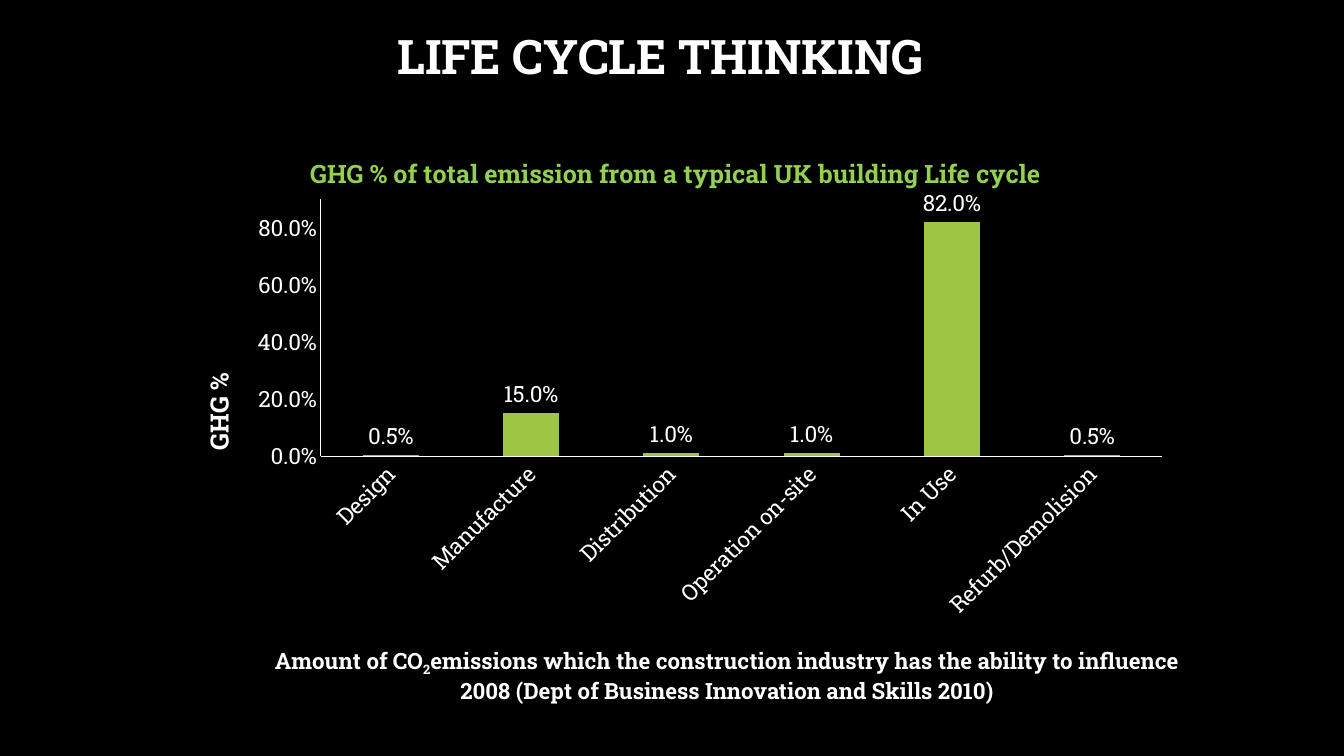
from lxml.etree import SubElement
from pptx import Presentation
from pptx.chart.data import CategoryChartData
from pptx.dml.color import RGBColor
from pptx.enum.chart import XL_CHART_TYPE, XL_LABEL_POSITION, XL_TICK_MARK
from pptx.enum.text import MSO_ANCHOR, PP_ALIGN
from pptx.oxml.ns import qn
from pptx.util import Inches, Pt

BLACK = RGBColor(0x00, 0x00, 0x00)
WHITE = RGBColor(0xFF, 0xFF, 0xFF)
LEAF = RGBColor(0x9E, 0xC5, 0x44)
LIME = RGBColor(0x92, 0xD0, 0x50)
FONT = "Roboto Slab"
WIDTH, HEIGHT = 13.33, 7.5

EMISSIONS = {
    "Design": 0.005,
    "Manufacture": 0.15,
    "Distribution": 0.01,
    "Operation on-site": 0.01,
    "In Use": 0.82,
    "Refurb/Demolision": 0.005,
}


def style(font, size, color=WHITE, bold=False):
    font.name = FONT
    font.size = Pt(size)
    font.bold = bold
    font.color.rgb = color


def add_text(s, box, parts, size, anchor=MSO_ANCHOR.TOP, spacing=1.0):
    tf = s.shapes.add_textbox(*box).text_frame
    tf.word_wrap = True
    tf.vertical_anchor = anchor
    p = tf.paragraphs[0]
    p.alignment = PP_ALIGN.CENTER
    p.line_spacing = spacing
    for text, baseline in parts:
        r = p.add_run()
        r.text = text
        style(r.font, size, bold=True)
        if baseline:
            r.font._element.set("baseline", str(baseline))


def place(element, index, **shares):
    for old in element.findall(qn("c:layout")):
        element.remove(old)
    layout = SubElement(element, qn("c:layout"))
    manual = SubElement(layout, qn("c:manualLayout"))
    if "w" in shares:
        SubElement(manual, qn("c:layoutTarget")).set("val", "inner")
    for key in ("x", "y"):
        SubElement(manual, qn(f"c:{key}Mode")).set("val", "edge")
    for key, share in shares.items():
        SubElement(manual, qn(f"c:{key}")).set("val", str(share))
    element.insert(index, layout)


def set_heading(title, text, color, **shares):
    tf = title.text_frame
    tf.text = text
    style(tf.paragraphs[0].runs[0].font, 18, color, True)
    place(title._element, 1, **shares)


def style_axis(axis):
    axis.has_major_gridlines = False
    axis.major_tick_mark = axis.minor_tick_mark = XL_TICK_MARK.NONE
    axis.format.line.color.rgb = WHITE
    axis.format.line.width = Pt(0.75)
    style(axis.tick_labels.font, 16)


def add_emissions_chart(s, box):
    data = CategoryChartData(number_format="0.0%")
    data.categories = list(EMISSIONS)
    data.add_series("Series 1", list(EMISSIONS.values()))
    chart = s.shapes.add_chart(XL_CHART_TYPE.COLUMN_CLUSTERED, *box, data).chart
    style(chart.font, 10)
    chart.has_legend = False
    chart.has_title = True
    set_heading(chart.chart_title,
                "GHG % of total emission from a typical UK building Life cycle",
                LIME, x=0.13, y=0.04)
    place(chart._chartSpace.chart.plotArea, 0, x=0.145, y=0.14, w=0.836, h=0.515)

    stages, shares = chart.category_axis, chart.value_axis
    style_axis(stages)
    stages._element.find(qn("c:txPr")).find(qn("a:bodyPr")).set("rot", "-2700000")
    style_axis(shares)
    shares.minimum_scale, shares.maximum_scale, shares.major_unit = 0, 0.9, 0.2
    shares.tick_labels.number_format = "0.0%"
    shares.tick_labels.number_format_is_linked = False
    shares.has_title = True
    set_heading(shares.axis_title, "GHG %", WHITE, x=0.02, y=0.48)

    plot = chart.plots[0]
    plot.gap_width = 150
    plot.vary_by_categories = False
    fill = plot.series[0].format.fill
    fill.solid()
    fill.fore_color.rgb = LEAF
    plot.has_data_labels = True
    labels = plot.data_labels
    labels.show_value = True
    labels.position = XL_LABEL_POSITION.OUTSIDE_END
    labels.number_format = "0.0%"
    labels.number_format_is_linked = False
    style(labels.font, 16)


def build_slide(prs):
    s = prs.slides.add_slide(prs.slide_layouts[6])
    s.background.fill.solid()
    s.background.fill.fore_color.rgb = BLACK

    def box(x, y, w, h):
        return (int(prs.slide_width * x), int(prs.slide_height * y),
                int(prs.slide_width * w), int(prs.slide_height * h))

    add_text(s, box(0.067, 0.004, 0.849, 0.148), [("LIFE CYCLE THINKING", 0)],
             34, MSO_ANCHOR.MIDDLE, 0.9)
    add_emissions_chart(s, box(0.13, 0.171, 0.749, 0.66))
    add_text(s, box(0.184, 0.849, 0.714, 0.085), [
        ("Amount of CO", 0),
        ("2", -25000),
        ("emissions which the construction industry has the ability to influence "
         "2008 (Dept of Business Innovation and Skills 2010)", 0),
    ], 16)


def main():
    prs = Presentation()
    prs.slide_width, prs.slide_height = Inches(WIDTH), Inches(HEIGHT)
    build_slide(prs)
    prs.save("out.pptx")


if __name__ == "__main__":
    main()
